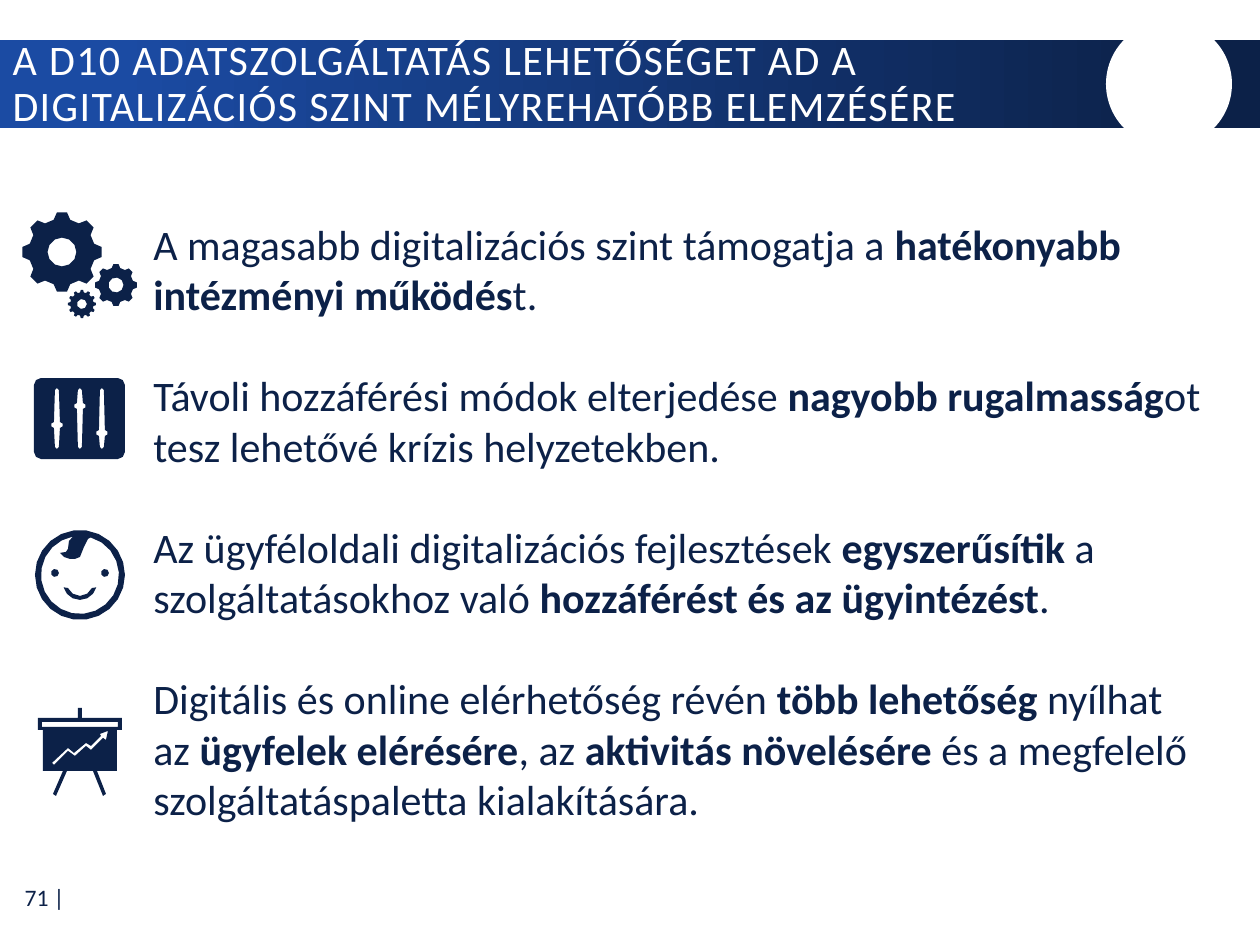
import math

import pptx
import pptx.dml.color
import pptx.enum.shapes
import pptx.enum.text
import pptx.util

PX = 914400 / 126
FINE = 10  # freeform units per px
NAVY = pptx.dml.color.RGBColor(0x0C, 0x21, 0x48)
BLUE = pptx.dml.color.RGBColor(0x1B, 0x4B, 0xA3)
WHITE = pptx.dml.color.RGBColor(0xFF, 0xFF, 0xFF)
FONT = "Calibri"
MIDDLE = pptx.enum.text.MSO_ANCHOR.MIDDLE
SHAPE = pptx.enum.shapes.MSO_SHAPE


def arc(x, y, radius, start=0, end=360):
    """Return points along an arc, with angles in degrees, clockwise from the right."""
    steps = max(2, round(abs(end - start) * math.sqrt(radius) / 110))
    angles = [math.radians(start + (end - start) * i / steps) for i in range(steps + 1)]
    return [(x + radius * math.cos(a), y + radius * math.sin(a)) for a in angles]


def draw_icon(slide, contours):
    """Draw closed contours as one navy freeform; inner contours become holes."""
    fine = [[(x * FINE, y * FINE) for x, y in contour] for contour in contours]
    builder = slide.shapes.build_freeform(*fine[0][0], scale=PX / FINE)
    for number, contour in enumerate(fine):
        if number:
            builder.move_to(*contour[0])
        builder.add_line_segments(contour[1:], close=True)
    icon = builder.convert_to_shape()
    icon.shadow.inherit = False
    icon.fill.solid()
    icon.fill.fore_color.rgb = NAVY
    icon.line.fill.background()


presentation = pptx.Presentation()
presentation.slide_width = round(1260 * PX)
presentation.slide_height = round(945 * PX)
slide = presentation.slides.add_slide(presentation.slide_layouts[5])

# Header band with its round badge
band_box = [round(v * PX) for v in (0, 40, 1260, 88)]
band = slide.shapes.add_shape(SHAPE.RECTANGLE, *band_box)
band.fill.gradient()
band.fill.gradient_angle = 0
for stop, position, color in zip(band.fill.gradient_stops, (0.09, 0.95), (BLUE, NAVY)):
    stop.position = position
    stop.color.rgb = color
badge_box = [round(v * PX) for v in (1106, 21, 126, 126)]
badge = slide.shapes.add_shape(SHAPE.OVAL, *badge_box)
badge.fill.solid()
badge.fill.fore_color.rgb = WHITE
for part in (band, badge):
    part.shadow.inherit = False
    part.line.fill.background()

# Title, brought in front of the band
title = slide.shapes.title
slide.shapes.element.append(title.element)
title.left, title.top, title.width, title.height = [
    round(v * PX) for v in (0, 43, 1115, 84)]
title.text_frame.text = ("A D10 ADATSZOLGÁLTATÁS LEHETŐSÉGET AD A "
                         "DIGITALIZÁCIÓS SZINT MÉLYREHATÓBB ELEMZÉSÉRE")
title.text_frame.auto_size = pptx.enum.text.MSO_AUTO_SIZE.NONE
title.text_frame.word_wrap = True
title.text_frame.vertical_anchor = MIDDLE
heading = title.text_frame.paragraphs[0]
heading.alignment = pptx.enum.text.PP_ALIGN.LEFT
heading.line_spacing = 0.9
heading_run = heading.runs[0]
heading_run.font.size = pptx.util.Pt(24)
heading_run.font.name = FONT
heading_run.font.color.rgb = WHITE
heading_run.font._element.set("spc", "80")

# Benefits: regular and bold pieces alternate
BENEFITS = [
    ["A magasabb digitalizációs szint támogatja a ",
     "hatékonyabb intézményi működés", "t."],
    ["Távoli hozzáférési módok elterjedése ", "nagyobb rugalmasság",
     "ot tesz lehetővé krízis helyzetekben."],
    ["Az ügyféloldali digitalizációs fejlesztések ", "egyszerűsítik ",
     "a szolgáltatásokhoz való ", "hozzáférést és az ügyintézést", "."],
    ["Digitális és online elérhetőség révén ", "több lehetőség ", "nyílhat az ",
     "ügyfelek elérésére", ", az ", "aktivitás növelésére ",
     "és a megfelelő szolgáltatáspaletta kialakítására."],
]
benefits_box = [round(v * PX) for v in (141, 197, 1074, 648)]
benefits = slide.shapes.add_textbox(*benefits_box).text_frame
benefits.word_wrap = True
benefits.vertical_anchor = MIDDLE
for row, pieces in enumerate(BENEFITS):
    benefit = benefits.add_paragraph() if row else benefits.paragraphs[0]
    if row:
        benefit.space_before = pptx.util.Pt(29)
    for order, piece in enumerate(pieces):
        run = benefit.add_run()
        run.text = piece
        run.font.size = pptx.util.Pt(24)
        run.font.name = FONT
        run.font.bold = order % 2 == 1
        run.font.color.rgb = NAVY

# Gears: centre, outer radius, number of teeth
gears = []
for x, y, radius, teeth in ((62, 252, 40, 8), (116, 285, 21, 8), (82, 304, 14, 12)):
    pitch = 2 * math.pi / teeth
    rim = []
    for tooth in range(teeth):
        for turn, reach in ((-0.32, 0.83), (-0.16, 1), (0.16, 1), (0.32, 0.83)):
            angle = (tooth + turn) * pitch - math.pi / 2
            rim.append((x + reach * radius * math.cos(angle),
                        y + reach * radius * math.sin(angle)))
    gears += [rim, arc(x, y, 0.36 * radius)]
draw_icon(slide, gears)

# Slider panel
panel = (arc(41, 385, 7, 180, 270) + arc(118, 385, 7, 270, 360)
         + arc(118, 452, 7, 0, 90) + arc(41, 452, 7, 90, 180))
sliders = [arc(x, 390, 2, 180, 360) + arc(x + 3, knob, 3, -90, 90)
           + arc(x, 447, 2, 0, 180) + arc(x - 3, knob, 3, 90, 270)
           for x, knob in ((57, 425), (80, 406), (102, 433))]
draw_icon(slide, [panel] + sliders)

# Smiling child
curl = [(69, 541), (68, 549), (66, 552), (60, 553), (64, 557), (70, 559),
        (75, 559), (80, 557), (84, 547), (88, 539)]
smile = arc(80, 583, 17, 15, 165) + arc(80, 583, 13, 157, 23)
draw_icon(slide, [arc(80, 575, 45), arc(80, 575, 39, -74, 260) + curl,
                  arc(55, 573, 4), arc(105, 573, 4), smile])

# Flip chart with rising arrow
easel = [(38, 718), (78, 718), (78, 708), (82, 708), (82, 718), (122, 718),
         (122, 730), (117, 730), (117, 771), (97, 771), (106, 794), (103, 796),
         (93, 771), (67, 771), (56, 796), (53, 794), (63, 771), (43, 771),
         (43, 730), (38, 730)]
rail = [(42, 722), (118, 722), (118, 727), (42, 727)]
trend = [(108, 731), (106, 740), (103, 738), (91, 750), (86, 746), (75, 756),
         (68, 751), (54, 765), (52, 763), (68, 748), (74, 753), (86, 743),
         (91, 746), (101, 736), (100, 734)]
draw_icon(slide, [easel, rail, trend])

# Page number
page_box = [round(v * PX) for v in (1, 874, 76, 47)]
page = slide.shapes.add_textbox(*page_box).text_frame
page.text = "71 |"
page.word_wrap = True
page.vertical_anchor = MIDDLE
page.paragraphs[0].alignment = pptx.enum.text.PP_ALIGN.RIGHT
page_font = page.paragraphs[0].runs[0].font
page_font.size = pptx.util.Pt(13.5)
page_font.name = FONT
page_font.color.rgb = NAVY

presentation.save("out.pptx")
